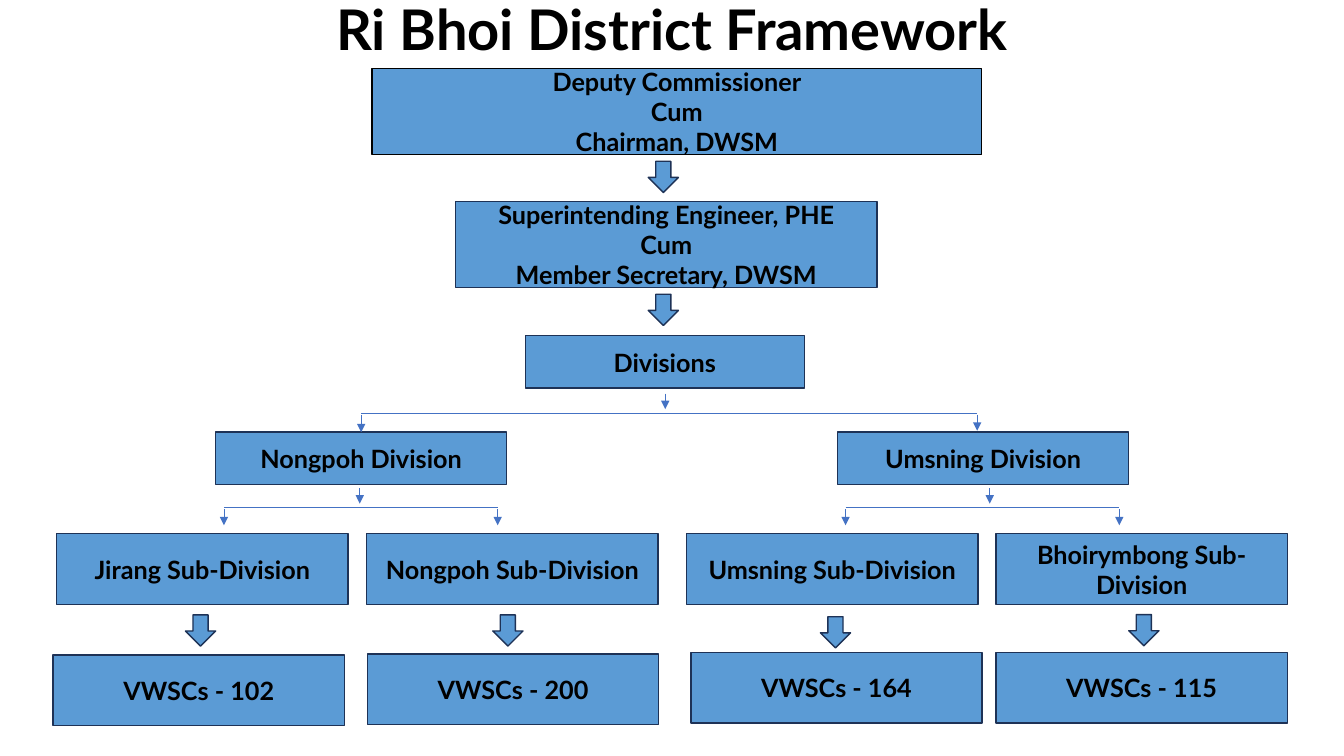
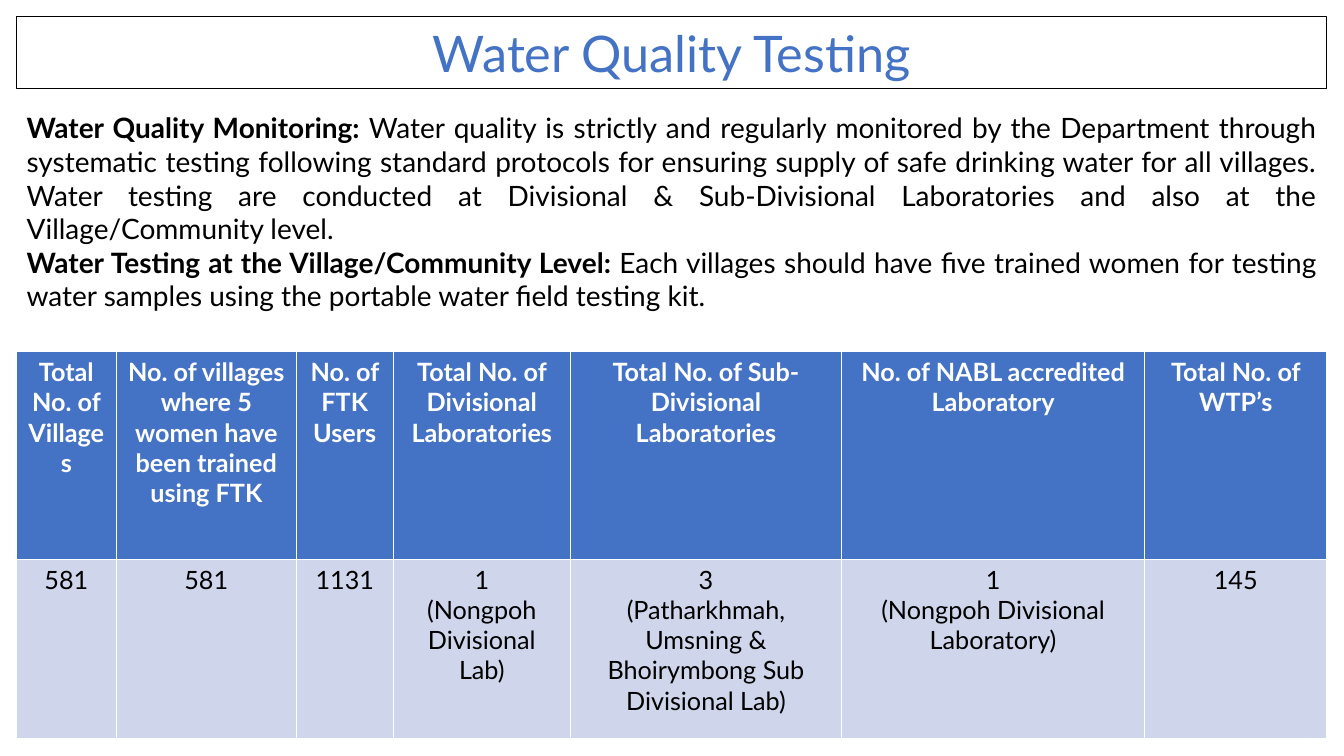
import pptx
import pptx.dml.color
import pptx.enum.shapes
import pptx.enum.text
import pptx.oxml
import pptx.oxml.ns
import pptx.util

Pt = pptx.util.Pt
ALIGN = pptx.enum.text.PP_ALIGN
ANCHOR = pptx.enum.text.MSO_ANCHOR
SHAPE = pptx.enum.shapes.MSO_SHAPE
STRAIGHT = pptx.enum.shapes.MSO_CONNECTOR.STRAIGHT
DRAWING_NS = pptx.oxml.ns.nsdecls("a")


def rgb(value):
    return pptx.dml.color.RGBColor.from_string(value)


class Deck:
    FONT = "Lato"
    BLACK, WHITE = "000000", "FFFFFF"
    ACCENT, PALE = "4472C4", "CFD5EA"
    BOX_FILL, BOX_LINE = "5B9BD5", "1E3256"

    def __init__(self, width, height):
        self.prs = pptx.Presentation()
        self.prs.slide_width, self.prs.slide_height = Pt(width), Pt(height)
        self.slide = None

    def new_slide(self):
        self.slide = self.prs.slides.add_slide(self.prs.slide_layouts[0])

    def place(self, shape, left, top, width, height):
        shape.left, shape.top = Pt(left), Pt(top)
        shape.width, shape.height = Pt(width), Pt(height)

    def style(self, paragraph, size, color=BLACK, bold=False, align=ALIGN.CENTER):
        paragraph.alignment = align
        for run in paragraph.runs:
            run.font.name, run.font.size, run.font.bold = self.FONT, Pt(size), bold
            run.font.color.rgb = rgb(color)

    def set_text(self, frame, text, size, **look):
        frame.text = text
        for paragraph in frame.paragraphs:
            self.style(paragraph, size, **look)

    def title(self, text, at, size, anchor, spacing=1.0, **look):
        heading = self.slide.shapes.title
        self.place(heading, *at)
        frame = heading.text_frame
        frame.auto_size = pptx.enum.text.MSO_AUTO_SIZE.NONE
        frame.vertical_anchor = anchor
        self.set_text(frame, text, size, **look)
        frame.paragraphs[0].line_spacing = spacing
        return heading

    def remove_body(self):
        body = self.slide.placeholders[1]
        body.element.getparent().remove(body.element)

    def body(self, passages, at, size):
        body = self.slide.placeholders[1]
        self.place(body, *at)
        frame = body.text_frame
        frame.auto_size = pptx.enum.text.MSO_AUTO_SIZE.NONE
        frame.vertical_anchor = ANCHOR.TOP
        for index, (lead, detail) in enumerate(passages):
            paragraph = frame.add_paragraph() if index else frame.paragraphs[0]
            for words in (lead, detail):
                paragraph.add_run().text = words
            self.style(paragraph, size, align=ALIGN.JUSTIFY)
            paragraph.runs[0].font.bold = True
            paragraph.space_before, paragraph.line_spacing = Pt(0), 1.0

    def block(self, kind, left, top, width, height, line=BOX_LINE):
        shape = self.slide.shapes.add_shape(
            kind, Pt(left), Pt(top), Pt(width), Pt(height))
        shape.shadow.inherit = False
        shape.fill.solid()
        shape.fill.fore_color.rgb = rgb(self.BOX_FILL)
        shape.line.color.rgb = rgb(line)
        shape.line.width = Pt(1)
        return shape

    def box(self, text, *at, line=BOX_LINE):
        shape = self.block(SHAPE.RECTANGLE, *at, line=line)
        shape.text_frame.word_wrap = True
        shape.text_frame.vertical_anchor = ANCHOR.MIDDLE
        self.set_text(shape.text_frame, text, 18, bold=True)
        return shape

    def down_arrow(self, left, top):
        self.block(SHAPE.DOWN_ARROW, left, top, 21.6, 22.3)

    def line(self, x1, y1, x2, y2, arrow=False):
        link = self.slide.shapes.add_connector(STRAIGHT, Pt(x1), Pt(y1), Pt(x2), Pt(y2))
        link.line.color.rgb = rgb(self.ACCENT)
        link.line.width = Pt(0.5)
        properties = link._element.spPr
        if arrow:
            tail = pptx.oxml.parse_xml(f'<a:tailEnd {DRAWING_NS} type="triangle"/>')
            properties.find(pptx.oxml.ns.qn("a:ln")).append(tail)
        properties.append(pptx.oxml.parse_xml(f"<a:effectLst {DRAWING_NS}/>"))
        return link

    def branch(self, stem, bar_y, left, right):
        """Stem above a bar, with an arrow down from each end of the bar."""
        self.line(stem, bar_y - 14, stem, bar_y - 3, arrow=True)
        self.line(left, bar_y, right, bar_y)
        return [self.line(x, bar_y + 1, x, bar_y + 12.5, arrow=True)
                for x in (left, right)]

    def table(self, rows, at, widths, heights):
        grid = self.slide.shapes.add_table(
            len(rows), len(widths), *[Pt(length) for length in at]).table
        for column, width in zip(grid.columns, widths):
            column.width = Pt(width)
        for row, height in zip(grid.rows, heights):
            row.height = Pt(height)
        for r, texts in enumerate(rows):
            header = r == 0
            for c, text in enumerate(texts):
                cell = grid.cell(r, c)
                cell.fill.solid()
                cell.fill.fore_color.rgb = rgb(self.ACCENT if header else self.PALE)
                self.set_text(cell.text_frame, text, 18, bold=header,
                              color=self.WHITE if header else self.BLACK)


def framework_slide(deck):
    deck.new_slide()
    deck.title("Ri Bhoi District Framework", (120, 0, 720, 48), 40,
               ANCHOR.BOTTOM, spacing=0.9, bold=True)
    deck.remove_body()

    # District officers
    deck.box("Deputy Commissioner\nCum\nChairman, DWSM",
             265.7, 49, 435.6, 61.2, line=deck.BLACK)
    deck.box("Superintending Engineer, PHE\nCum\nMember Secretary, DWSM",
             325.4, 144, 301, 61.2)
    deck.box("Divisions", 375.2, 239.8, 199.4, 37.4)
    for top in (115.2, 210.2):
        deck.down_arrow(463, top)

    # Divisions
    nongpoh = deck.box("Nongpoh Division", 154, 308.7, 208, 37.4)
    deck.box("Umsning Division", 598.3, 308.7, 208, 37.4)
    to_nongpoh, _ = deck.branch(475.2, 295.2, 258, 698)
    to_nongpoh.end_connect(nongpoh, 0)
    deck.branch(257, 362.7, 160, 355.5)
    deck.branch(707, 362.7, 604, 799.5)

    # Sub-divisions and their village committees
    columns = [
        ("Jirang", 102, 40.5, 38, 132.5, 439.2, 468),
        ("Nongpoh", 200, 262, 262.5, 352, 439.2, 467.3),
        ("Umsning", 164, 490.5, 493.5, 586, 440.5, 466),
        ("Bhoirymbong", 115, 711.5, 711.5, 806.3, 439, 466),
    ]
    for name, count, sub_x, count_x, arrow_x, arrow_y, count_y in columns:
        deck.box(f"{name} Sub-Division", sub_x, 381.3, 208, 50.4)
        deck.down_arrow(arrow_x, arrow_y)
        deck.box(f"VWSCs - {count}", count_x, count_y, 208, 50.4)


def testing_slide(deck):
    deck.new_slide()
    left, width = 11.8, 936

    # Framed title
    heading = deck.title("Water Quality Testing", (left, 12, width, 51), 36,
                         ANCHOR.MIDDLE, color=deck.ACCENT)
    heading.line.color.rgb = rgb(deck.BLACK)
    heading.line.width = Pt(0.75)

    # Explanation
    deck.body([
        ("Water Quality Monitoring: ",
         "Water quality is strictly and regularly monitored by the Department "
         "through systematic testing following standard protocols for ensuring "
         "supply of safe drinking water for all villages. Water testing are "
         "conducted at Divisional & Sub-Divisional Laboratories and also at the "
         "Village/Community level."),
        ("Water Testing at the Village/Community Level: ",
         "Each villages should have five trained women for testing water samples "
         "using the portable water field testing kit."),
    ], (left, 75.6, width, 160), 20)

    # Testing figures
    figures = [
        ("Total No. of Villages", "581"),
        ("No. of villages where 5 women have been trained using FTK", "581"),
        ("No. of FTK Users", "1131"),
        ("Total No. of Divisional Laboratories", "1\n(Nongpoh Divisional Lab)"),
        ("Total No. of Sub-Divisional Laboratories",
         "3\n(Patharkhmah, Umsning & Bhoirymbong Sub Divisional Lab)"),
        ("No. of NABL accredited Laboratory", "1\n(Nongpoh Divisional Laboratory)"),
        ("Total No. of WTP’s", "145"),
    ]
    deck.table(list(zip(*figures)), (left, 251.3, width, 276.4),
               [71.2, 128.8, 69.1, 126.7, 193.6, 216.6, 130], [148.2, 128.2])


def main():
    deck = Deck(960, 540)
    framework_slide(deck)
    testing_slide(deck)
    deck.prs.save("out.pptx")


if __name__ == "__main__":
    main()
